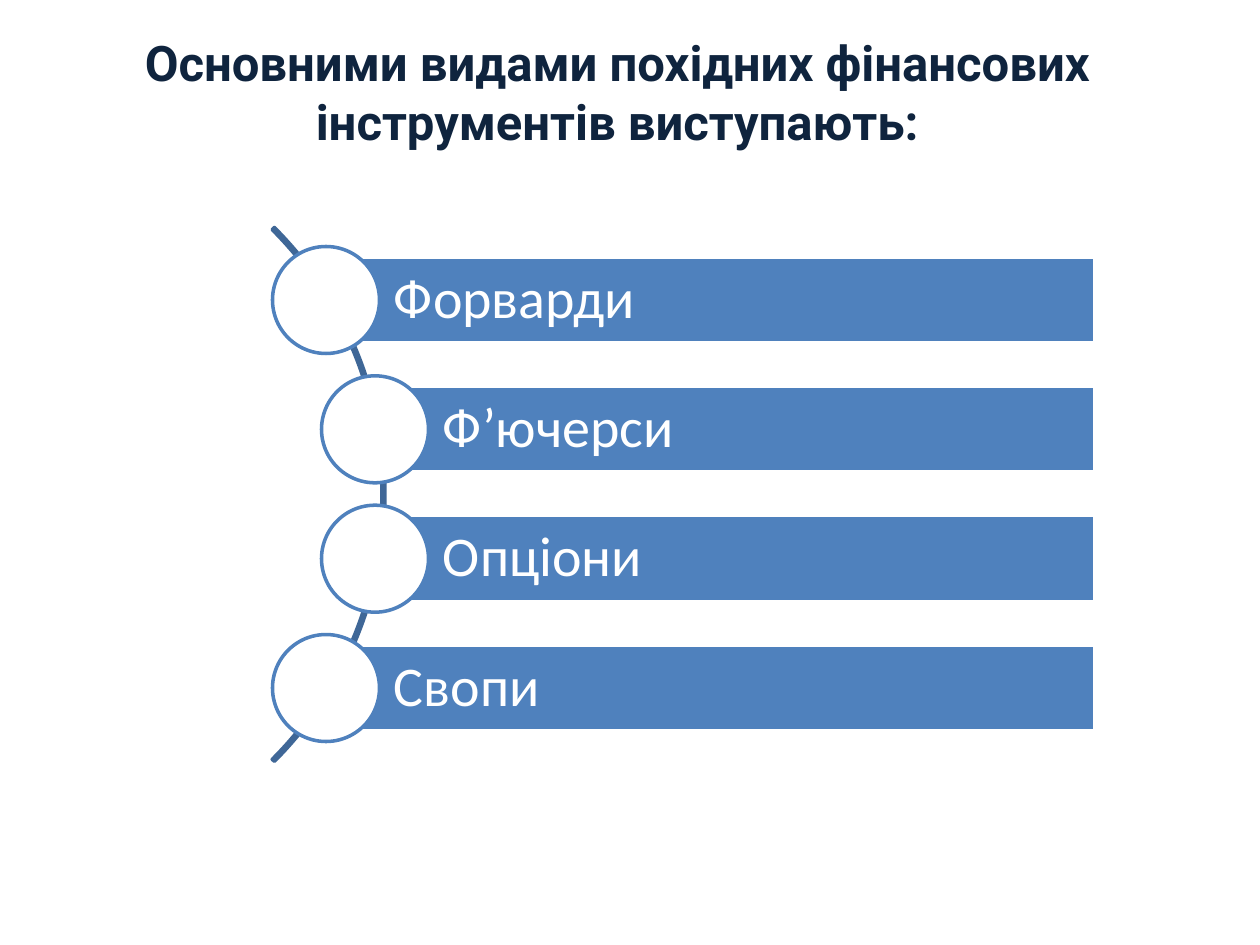
from pptx import Presentation
from pptx.dml.color import RGBColor
from pptx.enum.shapes import MSO_SHAPE
from pptx.enum.text import MSO_ANCHOR, MSO_AUTO_SIZE, PP_ALIGN
from pptx.util import Emu, Pt

PX = 914400 / 126


def px(length):
    return Emu(round(length * PX))


def write(box, text, *, font, size, color, bold=False, align=PP_ALIGN.LEFT,
          anchor=MSO_ANCHOR.MIDDLE, spacing=1.0, left_inset=12):
    frame = box.text_frame
    frame.word_wrap = True
    frame.vertical_anchor = anchor
    frame.margin_left = px(left_inset)
    para = frame.paragraphs[0]
    para.alignment = align
    para.line_spacing = spacing
    span = para.add_run()
    span.text = text
    span.font.name = font
    span.font.size = Pt(size)
    span.font.bold = bold
    span.font.color.rgb = RGBColor.from_string(color)


deck = Presentation()
deck.slide_width, deck.slide_height = px(1260), px(945)
page = deck.slides.add_slide(deck.slide_layouts[5])

# Title
title = page.shapes.title
title.left, title.top, title.width, title.height = px(0), px(26), px(1235), px(131)
write(title, "Основними видами похідних фінансових інструментів виступають:",
      font="Roboto", size=28, color="0F243E", bold=True,
      align=PP_ALIGN.CENTER, anchor=MSO_ANCHOR.TOP)
title.text_frame.auto_size = MSO_AUTO_SIZE.SHAPE_TO_FIT_TEXT

# Arc behind the list; the first two adjustments are its end angles
arc = page.shapes.add_shape(MSO_SHAPE.BLOCK_ARC, px(-370), px(117), px(755), px(755))
arc.adjustments[0], arc.adjustments[1], arc.adjustments[2] = 189, 27, 0.004
arc.shadow.inherit = False
arc.fill.background()
arc.line.color.rgb = RGBColor.from_string("3F6797")
arc.line.width = Pt(2)

# Bars, each with a circle centred on its left edge
BAR_RIGHT, BAR_HEIGHT, CIRCLE = 1095, 86, 107
FIRST_MIDDLE, LAST_MIDDLE = 300, 688
instruments = [("Форварди", 326), ("Ф’ючерси", 375), ("Опціони", 375), ("Свопи", 326)]
step = (LAST_MIDDLE - FIRST_MIDDLE) / (len(instruments) - 1)

for index, (name, left) in enumerate(instruments):
    middle = FIRST_MIDDLE + index * step
    bar = page.shapes.add_shape(
        MSO_SHAPE.RECTANGLE, px(left), px(middle - BAR_HEIGHT / 2),
        px(BAR_RIGHT - left), px(BAR_HEIGHT))
    circle = page.shapes.add_shape(
        MSO_SHAPE.OVAL, px(left - CIRCLE / 2), px(middle - CIRCLE / 2),
        px(CIRCLE), px(CIRCLE))
    for shape, fill, line in ((bar, "4F81BD", "FFFFFF"), (circle, "FFFFFF", "4F81BD")):
        shape.shadow.inherit = False
        shape.fill.solid()
        shape.fill.fore_color.rgb = RGBColor.from_string(fill)
        shape.line.color.rgb = RGBColor.from_string(line)
        shape.line.width = Pt(2)
    write(bar, name, font="Calibri", size=32, color="FFFFFF", spacing=0.9, left_inset=68)

deck.save("out.pptx")
